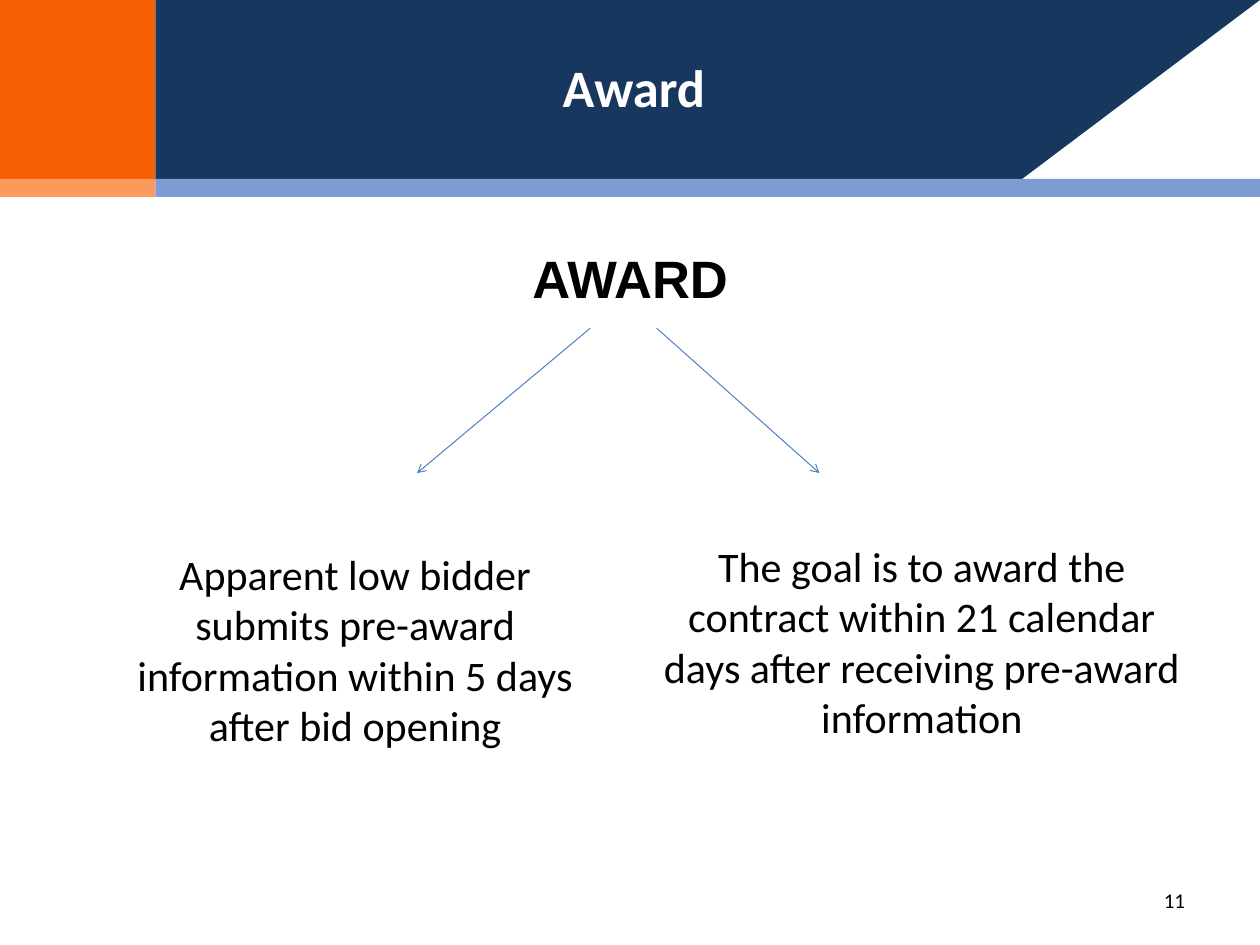
from lxml import etree
from pptx import Presentation
from pptx.dml.color import RGBColor
from pptx.enum.shapes import MSO_CONNECTOR, MSO_SHAPE
from pptx.enum.text import MSO_ANCHOR, MSO_AUTO_SIZE, PP_ALIGN
from pptx.oxml.ns import qn
from pptx.util import Cm, Pt

WIDTH, HEIGHT = 33.83, 25.37
SIDE = 4.17      # width of the orange block
HEADER = 4.83    # height of the header
STRIP_TOP, STRIP_HEIGHT = 4.8, 0.49


def color(value):
    return RGBColor.from_string(value)


class SlideBuilder:
    """Holds the style and the current slide; lengths are in centimetres."""
    font, ink, line = "Calibri", "000000", "4B7EBC"

    def __init__(self, presentation):
        self.slide = presentation.slides.add_slide(presentation.slide_layouts[5])
        self.shapes = self.slide.shapes

    def paint(self, shape, fill):
        shape.shadow.inherit = False
        shape.fill.solid()
        shape.fill.fore_color.rgb = color(fill)
        shape.line.fill.background()

    def band(self, left, top, width, height, fill):
        shape = self.shapes.add_shape(
            MSO_SHAPE.RECTANGLE, Cm(left), Cm(top), Cm(width), Cm(height))
        self.paint(shape, fill)

    def outline(self, points, fill):
        corners = [(Cm(x), Cm(y)) for x, y in points]
        builder = self.shapes.build_freeform(*corners[0])
        builder.add_line_segments(corners[1:], close=True)
        self.paint(builder.convert_to_shape(), fill)

    def set_text(self, shape, text, size, font=None, bold=False, ink=None,
                 align=PP_ALIGN.CENTER, margins=None):
        frame = shape.text_frame
        frame.word_wrap = True
        frame.auto_size = MSO_AUTO_SIZE.NONE
        frame.vertical_anchor = MSO_ANCHOR.TOP
        if margins is not None:
            (frame.margin_left, frame.margin_top,
             frame.margin_right, frame.margin_bottom) = map(Cm, margins)
        frame.text = text
        paragraph = frame.paragraphs[0]
        paragraph.alignment = align
        paragraph.font.name = font or self.font
        paragraph.font.size = Pt(size)
        paragraph.font.bold = bold
        paragraph.font.color.rgb = color(ink or self.ink)

    def title(self, text, left, top, width, height, **style):
        title = self.shapes.title
        title.left, title.top = Cm(left), Cm(top)
        title.width, title.height = Cm(width), Cm(height)
        self.set_text(title, text, **style)
        # Bring the title in front of the header shapes
        title.element.getparent().append(title.element)

    def text(self, text, left, top, width, height, **style):
        box = self.shapes.add_textbox(Cm(left), Cm(top), Cm(width), Cm(height))
        self.set_text(box, text, **style)

    def arrow(self, start, end):
        connector = self.shapes.add_connector(
            MSO_CONNECTOR.STRAIGHT, *map(Cm, start + end))
        connector.line.color.rgb = color(self.line)
        connector.line.width = Pt(0.75)
        properties = connector.element.find(qn("p:spPr"))
        etree.SubElement(properties.find(qn("a:ln")), qn("a:tailEnd"), type="arrow")
        etree.SubElement(properties, qn("a:effectLst"))


def main():
    presentation = Presentation()
    presentation.slide_width, presentation.slide_height = Cm(WIDTH), Cm(HEIGHT)
    builder = SlideBuilder(presentation)

    # Header
    builder.outline([(WIDTH, 0), (SIDE, 0), (SIDE, HEADER), (27.41, HEADER)], "17375E")
    builder.band(0, 0, SIDE, HEADER, "F75F03")
    builder.band(SIDE, STRIP_TOP, WIDTH - SIDE, STRIP_HEIGHT, "7E9BD2")
    builder.band(0, STRIP_TOP, SIDE, STRIP_HEIGHT, "FC9A5D")
    builder.title("Award", 4.22, 1.47, 25.6, 1.7, size=40, bold=True,
                  ink="FFFFFF", margins=(0, 0, 0, 0))

    # Heading with its two branches
    builder.text("AWARD", 0.41, 6.48, 33.02, 2.57, size=40, font="Arial", bold=True)
    builder.arrow((15.85, 8.81), (11.2, 12.7))
    builder.arrow((17.63, 8.81), (22, 12.7))
    builder.text("Apparent low bidder submits pre-award information within 5 days "
                 "after bid opening", 3, 14.6, 13.08, 5.74, size=32)
    builder.text("The goal is to award the contract within 21 calendar days after "
                 "receiving pre-award information", 17.35, 14.38, 14.81, 5.74, size=32)

    # Slide number
    builder.text("11", 30.89, 23.83, 0.99, 0.69, size=16, align=PP_ALIGN.LEFT,
                 margins=(0.36, 0, 0, 0))

    presentation.save("out.pptx")


if __name__ == "__main__":
    main()
